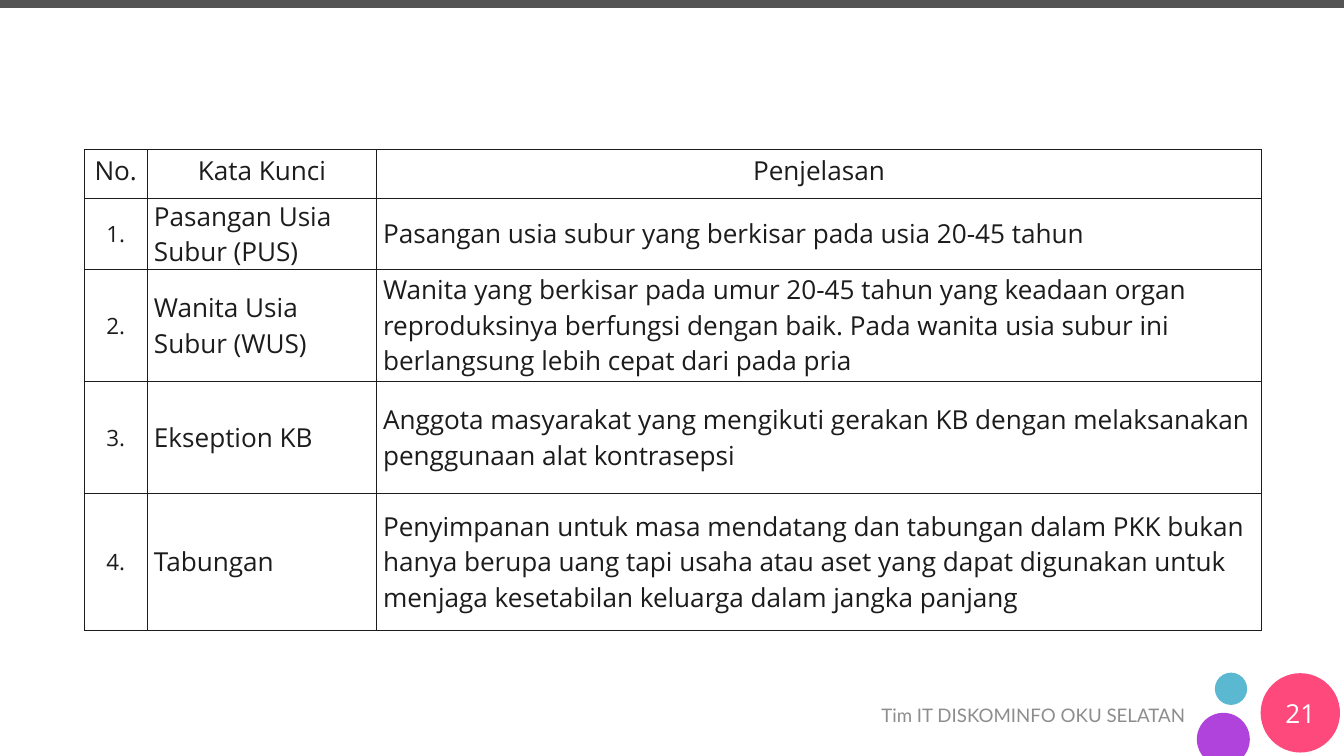
"""Build a glossary slide with a ruled table, a footer and a page badge."""
import math
from typing import NamedTuple

import lxml.etree
import pptx
import pptx.dml.color
import pptx.enum.shapes
import pptx.enum.text
import pptx.oxml.ns
import pptx.util

Cm = pptx.util.Cm
Pt = pptx.util.Pt
ALIGN = pptx.enum.text.PP_ALIGN
ANCHOR = pptx.enum.text.MSO_ANCHOR
KIND = pptx.enum.shapes.MSO_SHAPE

HUES = {
    "ink": "1C1C1C",
    "bar": "545454",
    "grey": "8D8D8D",
    "teal": "5BB8D1",
    "pink": "FD497C",
    "plum": "B143DD",
    "white": "FFFFFF",
}
WIDE, HIGH = 50.8, 28.58


class Box(NamedTuple):
    left: float
    top: float
    width: float
    height: float


class Form(NamedTuple):
    kind: pptx.enum.shapes.MSO_SHAPE
    box: Box
    hue: str


class Style(NamedTuple):
    size: int
    hue: str = "ink"
    font: str = "Open Sans"
    align: pptx.enum.text.PP_ALIGN = ALIGN.LEFT


class Label(NamedTuple):
    text: str
    box: Box
    style: Style


class Term(NamedTuple):
    name: str
    sense: str
    height: float


BADGE = Box(47.65, 25.45, 3, 3)
FORMS = [
    Form(KIND.OVAL, Box(45.92, 25.43, 1.22, 1.22), "teal"),
    Form(KIND.OVAL, BADGE, "pink"),
    Form(KIND.RECTANGLE, Box(0, 0, WIDE, 0.3), "bar"),
]
LABELS = [
    Label("Tim IT DISKOMINFO OKU SELATAN", Box(29.18, 26.29, 16.08, 1.52),
          Style(20, "grey", "Lato", ALIGN.RIGHT)),
    Label("21", Box(BADGE.left, 26.21, BADGE.width, 1.52),
          Style(28, "white", align=ALIGN.CENTER)),
]
HEADS = ["No.", "Kata Kunci", "Penjelasan"]
COLS = [2.39, 8.66, 33.45]
HEAD_HIGH = 1.85
TERMS = [
    Term("Pasangan Usia Subur (PUS)",
         "Pasangan usia subur yang berkisar pada usia 20-45 tahun", 2.69),
    Term("Wanita Usia Subur (WUS)",
         "Wanita yang berkisar pada umur 20-45 tahun yang keadaan organ "
         "reproduksinya berfungsi dengan baik. Pada wanita usia subur ini "
         "berlangsung lebih cepat dari pada pria", 4.24),
    Term("Ekseption KB",
         "Anggota masyarakat yang mengikuti gerakan KB dengan melaksanakan "
         "penggunaan alat kontrasepsi", 4.24),
    Term("Tabungan",
         "Penyimpanan untuk masa mendatang dan tabungan dalam PKK bukan hanya "
         "berupa uang tapi usaha atau aset yang dapat digunakan untuk menjaga "
         "kesetabilan keluarga dalam jangka panjang", 5.16),
]


def tint(name: str) -> pptx.dml.color.RGBColor:
    return pptx.dml.color.RGBColor.from_string(HUES[name])


def paint(shape, hue: str) -> None:
    shape.shadow.inherit = False
    shape.fill.solid()
    shape.fill.fore_color.rgb = tint(hue)
    shape.line.fill.background()


def write(frame, text: str, style: Style) -> None:
    para = frame.paragraphs[0]
    para.alignment = style.align
    run = para.add_run()
    run.text = text
    run.font.size = Pt(style.size)
    run.font.name = style.font
    run.font.color.rgb = tint(style.hue)


def draw_form(slide, form: Form) -> None:
    paint(slide.shapes.add_shape(form.kind, *map(Cm, form.box)), form.hue)


def draw_dome(slide, mid: float, level: float, radius: float, hue: str) -> None:
    dip = math.asin((HIGH - level) / radius)
    steps = 90
    turns = [dip - i * (math.pi + 2 * dip) / steps for i in range(steps + 1)]
    dots = [(Cm(mid + radius * math.cos(t)), Cm(level + radius * math.sin(t)))
            for t in turns]
    pen = slide.shapes.build_freeform(*dots[0])
    pen.add_line_segments(dots[1:], close=True)
    paint(pen.convert_to_shape(), hue)


def draw_label(slide, label: Label) -> None:
    frame = slide.shapes.add_textbox(*map(Cm, label.box)).text_frame
    frame.word_wrap = True
    frame.vertical_anchor = ANCHOR.MIDDLE
    frame.margin_left = frame.margin_right = Cm(0.46)
    frame.margin_top = frame.margin_bottom = Cm(0.23)
    write(frame, label.text, label.style)


def rule_cell(cell) -> None:
    props = cell._tc.get_or_add_tcPr()
    qn = pptx.oxml.ns.qn
    for side in ("a:lnL", "a:lnR", "a:lnT", "a:lnB"):
        line = lxml.etree.SubElement(props, qn(side), w=str(Pt(1)))
        fill = lxml.etree.SubElement(line, qn("a:solidFill"))
        lxml.etree.SubElement(fill, qn("a:srgbClr"), val=HUES["ink"])


def fill_cell(cell, text: str, style: Style, head: bool) -> None:
    rule_cell(cell)
    cell.fill.background()
    cell.margin_left = cell.margin_right = Cm(0.25)
    cell.margin_top = cell.margin_bottom = Cm(0.13 if head else 0)
    cell.vertical_anchor = ANCHOR.TOP if head else ANCHOR.MIDDLE
    write(cell.text_frame, text, style)


def draw_table(slide, left: float, top: float) -> None:
    highs = [HEAD_HIGH] + [term.height for term in TERMS]
    box = Box(left, top, sum(COLS), sum(highs))
    table = slide.shapes.add_table(len(highs), len(COLS), *map(Cm, box)).table
    table.first_row = table.horz_banding = False
    for col, width in zip(table.columns, COLS):
        col.width = Cm(width)
    for row, height in zip(table.rows, highs):
        row.height = Cm(height)
    for x, text in enumerate(HEADS):
        fill_cell(table.cell(0, x), text, Style(28, align=ALIGN.CENTER), True)
    for y, term in enumerate(TERMS, 1):
        fill_cell(table.cell(y, 0), f"{y}.", Style(24, align=ALIGN.CENTER), False)
        fill_cell(table.cell(y, 1), term.name, Style(28), False)
        fill_cell(table.cell(y, 2), term.sense, Style(28), False)


def main() -> None:
    deck = pptx.Presentation()
    deck.slide_width, deck.slide_height = Cm(WIDE), Cm(HIGH)
    slide = deck.slides.add_slide(deck.slide_layouts[6])
    for form in FORMS:
        draw_form(slide, form)
    draw_dome(slide, 46.24, 27.95, 1, "plum")
    for label in LABELS:
        draw_label(slide, label)
    draw_table(slide, 3.18, 5.64)
    deck.save("out.pptx")


if __name__ == "__main__":
    main()
